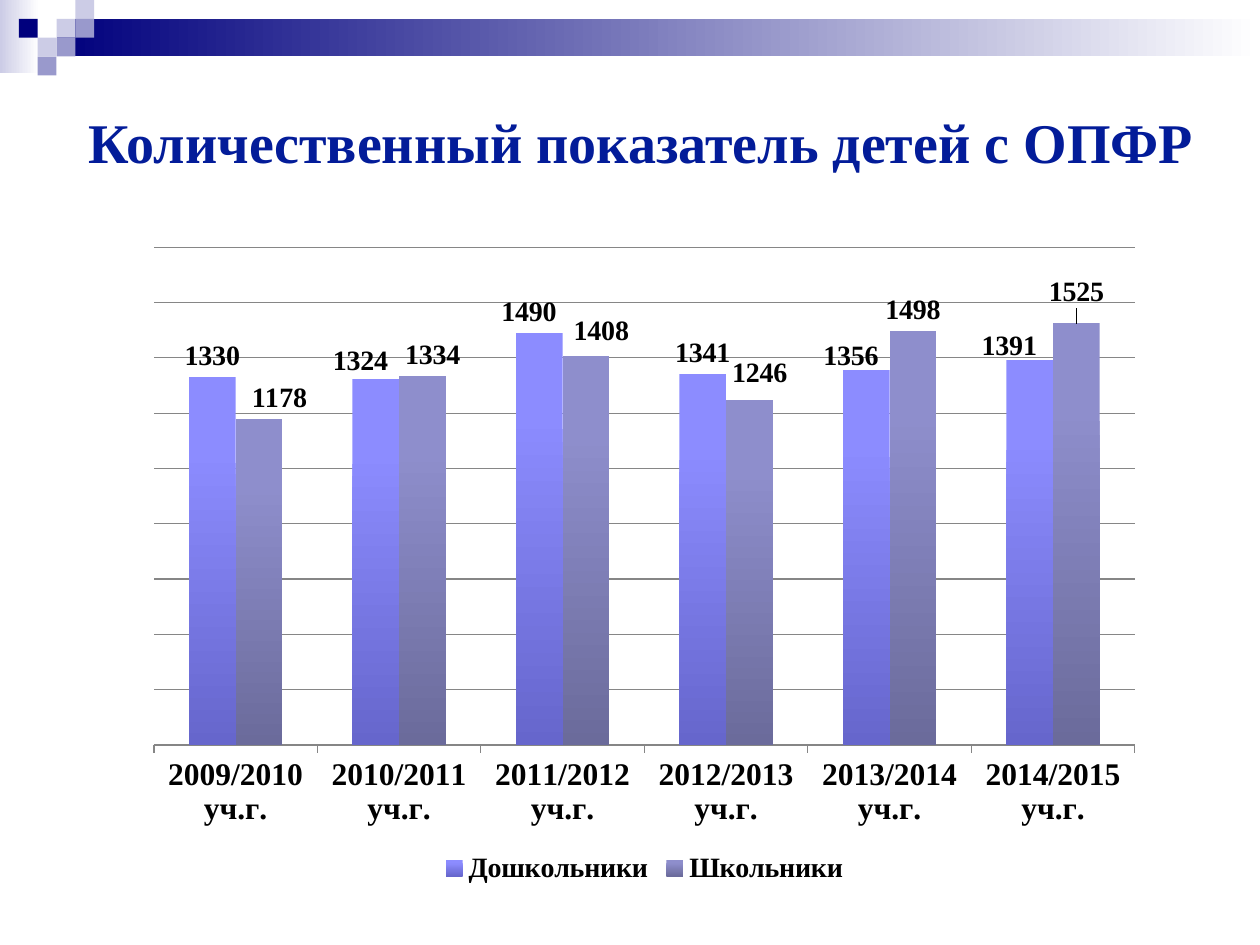
from lxml import etree
from pptx import Presentation
from pptx.chart.data import CategoryChartData
from pptx.dml.color import RGBColor
from pptx.enum.chart import XL_CHART_TYPE as CT, XL_LABEL_POSITION as LP
from pptx.enum.chart import XL_LEGEND_POSITION as LEG, XL_TICK_MARK as TM
from pptx.enum.chart import XL_TICK_LABEL_POSITION as TLP
from pptx.enum.shapes import MSO_SHAPE as SH
from pptx.enum.text import MSO_ANCHOR as ANC, PP_ALIGN as AL
from pptx.oxml import parse_xml
from pptx.oxml.ns import nsdecls, qn
from pptx.util import Cm, Pt

rgb = RGBColor.from_string


def write(text, tf=None, font=None, size=16, bold=True, color="000000", name="Times New Roman"):
    if tf is not None:
        p = tf.paragraphs[0]
        p.alignment = AL.CENTER
        r = p.add_run()
        r.text = text
        font = r.font
    font.size, font.bold, font.name = Pt(size), bold, name
    font.color.rgb = rgb(color)


def paint(fill, colors, angle=0, start=0):
    if len(colors) == 1:
        fill.solid()
        fill.fore_color.rgb = rgb(colors[0])
        return
    fill.gradient()
    fill.gradient_angle = angle
    for stop, color, pos in zip(fill.gradient_stops, colors, (start, 1)):
        stop.color.rgb = rgb(color)
        stop.position = pos


prs = Presentation()
prs.slide_width, prs.slide_height = Cm(25.4), Cm(19.05)
s = prs.slides.add_slide(prs.slide_layouts[5])

step = 0.38
decor = [
    (0, 0, 0.79, 1.47, ["CCCCE6", "FFFFFF"]),
    (3 * step, step, 24.26, 2 * step, ["00007D", "FFFFFF"]),
]
squares = [(3, 1, "CCCCE6"), (4, 0, "CCCCE6"), (4, 1, "9999CC"), (2, 2, "CCCCE6"),
           (1, 1, "00007D"), (3, 2, "9999CC"), (2, 3, "9999CC")]
decor += [(col * step, row * step, step, step, [color]) for col, row, color in squares]
for x, y, w, h, colors in decor:
    sp = s.shapes.add_shape(SH.RECTANGLE, Cm(x), Cm(y), Cm(w), Cm(h))
    sp.shadow.inherit = False
    sp.line.fill.background()
    paint(sp.fill, colors)

title = s.shapes.title
title.left, title.top, title.width, title.height = Cm(1.5), Cm(1.93), Cm(22.86), Cm(1.85)
tf = title.text_frame
tf.word_wrap = True
tf.margin_left = tf.margin_right = 0
tf.vertical_anchor = ANC.MIDDLE
write("Количественный показатель детей с ОПФР", tf=tf, size=32, color="031C99")

series = [
    ("Дошкольники", [1330, 1324, 1490, 1341, 1356, 1391], ["8C8CFF", "6666CC"],
     {1: (-0.015, 0.005), 2: (-0.01, 0), 4: (-0.015, 0.01), 5: (-0.02, 0.01)}),
    ("Школьники", [1178, 1334, 1408, 1246, 1498, 1525], ["8E8ECC", "6B6B9B"],
     {0: (0.02, 0), 1: (0.01, 0), 2: (0.015, -0.005), 3: (0.01, -0.01),
      4: (0, 0), 5: (0, -0.015)}),
]
data = CategoryChartData()
data.categories = [f"{year}/{year + 1} уч.г." for year in range(2009, 2015)]
for name, values, colors, shifts in series:
    data.add_series(name, values)
chart = s.shapes.add_chart(CT.COLUMN_CLUSTERED, Cm(2.69), Cm(4.72), Cm(20.6), Cm(13.21),
                           data).chart
chart.has_title = False
chart.font.size, chart.font.name = Pt(10), "Arial"
chart.font.color.rgb = rgb("000000")

chart.has_legend = True
chart.legend.position = LEG.BOTTOM
chart.legend.include_in_layout = False
write("", font=chart.legend.font, size=16)

cat, val = chart.category_axis, chart.value_axis
cat.major_tick_mark = TM.OUTSIDE
cat.tick_label_position = TLP.LOW
write("", font=cat.tick_labels.font, size=18)
val.visible = False
val.minimum_scale, val.maximum_scale, val.major_unit = 0, 1800, 200
val.has_major_gridlines = True
for line in (cat.format.line, val.major_gridlines.format.line):
    line.color.rgb = rgb("868686")
    line.width = Pt(0.75)

plot = chart.plots[0]
plot.gap_width, plot.overlap, plot.vary_by_categories = 150, 0, False
for ser, (name, values, colors, shifts) in zip(plot.series, series):
    paint(ser.format.fill, colors, angle=270, start=0.2)
    labels = ser.data_labels
    labels.show_value = True
    labels.position = LP.OUTSIDE_END
    write("", font=labels.font)
    for i in shifts:
        label = ser.points[i].data_label
        label.position = LP.OUTSIDE_END
        write("", font=label.font)
    for el in ser._element.iter(qn("c:dLbl")):
        idx = el.find(qn("c:idx"))
        dx, dy = shifts[int(idx.get("val"))]
        idx.addnext(parse_xml(
            f'<c:layout {nsdecls("c")}><c:manualLayout><c:x val="{dx}"/><c:y val="{dy}"/>'
            '</c:manualLayout></c:layout>'))

area = chart._chartSpace.find(".//" + qn("c:plotArea"))
for old in area.findall(qn("c:layout")):
    area.remove(old)
layout = etree.Element(qn("c:layout"))
manual = etree.SubElement(layout, qn("c:manualLayout"))
for tag, value in [("layoutTarget", "inner"), ("xMode", "edge"), ("yMode", "edge"),
                   ("x", 0.02), ("y", 0.02), ("w", 0.96), ("h", 0.76)]:
    etree.SubElement(manual, qn("c:" + tag)).set("val", str(value))
area.insert(0, layout)

prs.save("out.pptx")
